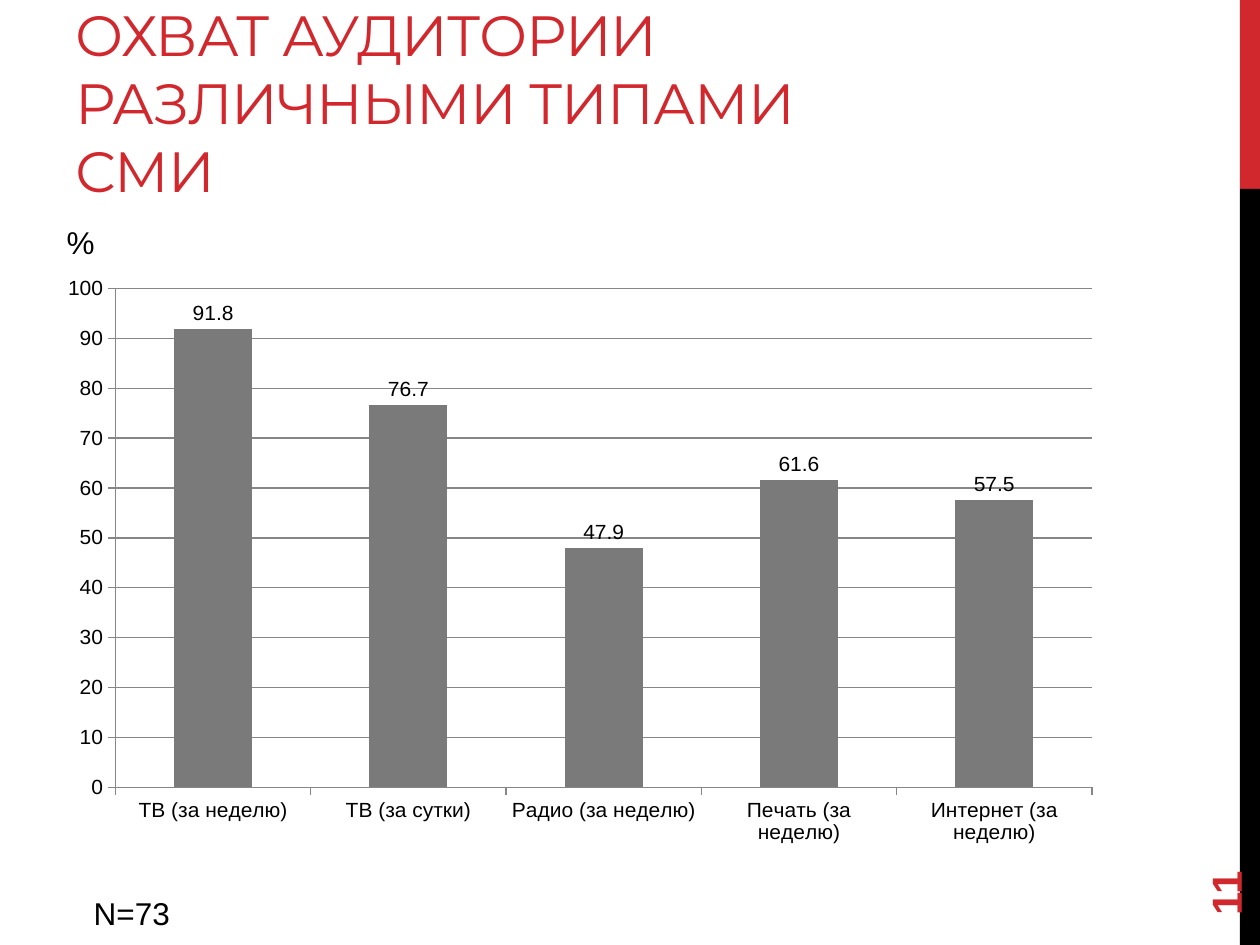
from lxml import etree
from pptx import Presentation
from pptx.chart.data import CategoryChartData
from pptx.dml.color import RGBColor
from pptx.enum.chart import XL_CHART_TYPE as ChartType
from pptx.enum.chart import XL_LABEL_POSITION as LabelPosition
from pptx.enum.chart import XL_TICK_MARK as TickMark
from pptx.enum.shapes import MSO_SHAPE as Shape
from pptx.enum.text import MSO_ANCHOR as Anchor
from pptx.oxml.ns import qn
from pptx.util import Pt

RED, BLACK, BAR_GRAY, LINE_GRAY = "D1282E", "000000", "7A7A7A", "868686"
REACH = {
    "ТВ (за неделю)": 91.8,
    "ТВ (за сутки)": 76.7,
    "Радио (за неделю)": 47.9,
    "Печать (за неделю)": 61.6,
    "Интернет (за неделю)": 57.5,
}


def color(hex_code):
    """Turn a hex string into a colour."""
    return RGBColor.from_string(hex_code)


def style_font(font, size, hex_code=BLACK, name="Arial", bold=False):
    """Set the face, size, weight and colour of a font."""
    font.name, font.size, font.bold = name, Pt(size), bold
    font.color.rgb = color(hex_code)


def add_band(page, left, top, width, height, hex_code):
    """Add a plain filled rectangle."""
    band = page.shapes.add_shape(Shape.RECTANGLE, Pt(left), Pt(top), Pt(width), Pt(height))
    band.shadow.inherit = False
    band.fill.solid()
    band.fill.fore_color.rgb = color(hex_code)
    band.line.fill.background()


def add_text(page, text, left, top, width, height, size, wrap=False, anchor=Anchor.TOP, **style):
    """Add a one-paragraph text box and return it."""
    box = page.shapes.add_textbox(Pt(left), Pt(top), Pt(width), Pt(height))
    frame = box.text_frame
    frame.text = text
    frame.word_wrap = wrap
    frame.vertical_anchor = anchor
    style_font(frame.paragraphs[0].runs[0].font, size, **style)
    return box


def set_plot_area(chart, **fractions):
    """Fix the inner plot area as fractions of the chart."""
    plot_area = chart.element.find(".//" + qn("c:plotArea"))
    layout = plot_area.find(qn("c:layout"))
    if layout is None:
        layout = etree.Element(qn("c:layout"))
        plot_area.insert(0, layout)
    manual = etree.SubElement(layout, qn("c:manualLayout"))
    settings = {"layoutTarget": "inner", "xMode": "edge", "yMode": "edge", **fractions}
    for tag, value in settings.items():
        etree.SubElement(manual, qn("c:" + tag)).set("val", str(value))


def style_axis(axis):
    """Set the text, line and tick marks of an axis."""
    style_font(axis.tick_labels.font, 12)
    axis.major_tick_mark = TickMark.OUTSIDE
    axis.minor_tick_mark = TickMark.NONE
    axis.format.line.color.rgb = color(LINE_GRAY)


def add_reach_chart(page, left, top, width, height):
    """Add the column chart of audience reach by media type."""
    data = CategoryChartData(number_format="0.0")
    data.categories = list(REACH)
    data.add_series("Series 1", list(REACH.values()))
    frame = page.shapes.add_chart(
        ChartType.COLUMN_CLUSTERED, Pt(left), Pt(top), Pt(width), Pt(height), data
    )
    chart = frame.chart
    chart.has_legend = chart.has_title = False
    style_font(chart.font, 10)
    set_plot_area(chart, x=0.05, y=0.08, w=0.93, h=0.85)

    style_axis(chart.category_axis)
    values = chart.value_axis
    style_axis(values)
    values.minimum_scale, values.maximum_scale, values.major_unit = 0, 100, 10
    values.tick_labels.number_format = "0"
    values.tick_labels.number_format_is_linked = False
    values.has_major_gridlines = True
    values.major_gridlines.format.line.color.rgb = color(LINE_GRAY)

    plot = chart.plots[0]
    plot.gap_width = 150
    plot.vary_by_categories = False
    series = plot.series[0]
    series.format.fill.solid()
    series.format.fill.fore_color.rgb = color(BAR_GRAY)
    labels = series.data_labels
    labels.show_value = True
    labels.position = LabelPosition.OUTSIDE_END
    labels.number_format = "0.0"
    labels.number_format_is_linked = False
    style_font(labels.font, 12)


def main():
    """Build the slide and save it."""
    deck = Presentation()
    deck.slide_width, deck.slide_height = Pt(720), Pt(540)
    page = deck.slides.add_slide(deck.slide_layouts[6])

    add_band(page, 708.5, 0, 11.5, 108, RED)
    add_band(page, 708.5, 108, 11.5, 432, BLACK)
    title = add_text(
        page, "ОХВАТ АУДИТОРИИ РАЗЛИЧНЫМИ ТИПАМИ СМИ", 36, 12, 456, 108, 32.4,
        wrap=True, anchor=Anchor.BOTTOM, hex_code=RED, name="Montserrat",
    )
    title.text_frame.paragraphs[0].runs[0].font._element.set("spc", "-60")
    number = add_text(
        page, "11", 648, 463.5, 104, 29, 24,
        wrap=True, anchor=Anchor.MIDDLE, hex_code=RED, bold=True,
    )
    number.rotation = 270
    add_reach_chart(page, 36, 138, 600, 344)
    add_text(page, "N=73", 46.5, 507.5, 58, 29, 18)
    add_text(page, "%", 31, 124, 31, 29, 18)
    deck.save("out.pptx")


if __name__ == "__main__":
    main()
